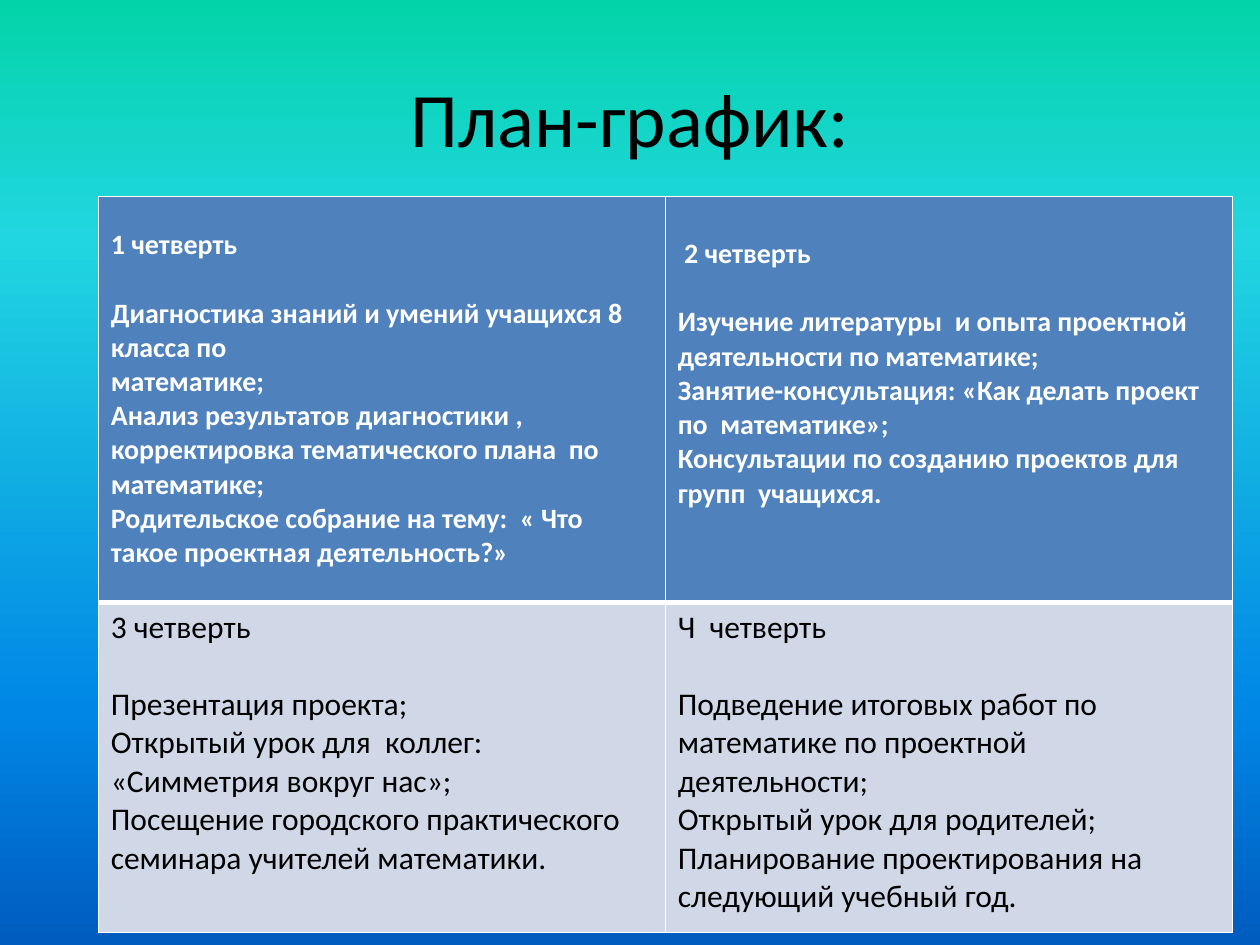
import pptx
import pptx.util
import pptx.oxml
import pptx.oxml.ns
import pptx.dml.color
import pptx.enum.text

Inches, Pt = pptx.util.Inches, pptx.util.Pt
FONT = "Calibri"
LINE_HEIGHT = 1.22
COLORS = {
    "heading_fill": "4F81BD",
    "body_fill": "D0D8E8",
    "light": "FFFFFF",
    "dark": "000000",
}
BACKGROUND_STOPS = [(0, "03D4A8"), (25, "21D6E0"), (75, "0087E6"), (100, "005CBF")]

# One entry per table row; each quarter has its top margin in inches and its lines.
ROWS = [
    {
        "height": 3.22, "size": 16, "bold": True, "fill": "heading_fill", "text": "light",
        "borders": {"L": 1, "R": 1, "T": 1, "B": 3},
        "quarters": [
            (0.25, [
                "1 четверть",
                "Диагностика знаний и умений учащихся 8 класса по",
                "математике;",
                "Анализ результатов диагностики , корректировка тематического плана  по математике;",
                "Родительское собрание на тему:  « Что такое проектная деятельность?»",
            ]),
            (0.32, [
                " 2 четверть",
                "Изучение литературы  и опыта проектной  деятельности по математике;",
                "Занятие-консультация: «Как делать проект по  математике»;",
                "Консультации по созданию проектов для групп  учащихся.",
            ]),
        ],
    },
    {
        "height": 2.62, "size": 18, "bold": False, "fill": "body_fill", "text": "dark",
        "borders": {"L": 1, "R": 1, "T": 3, "B": 1},
        "quarters": [
            (0.05, [
                "3 четверть",
                "Презентация проекта;",
                "Открытый урок для  коллег: «Симметрия вокруг нас»;",
                "Посещение городского практического семинара учителей математики.",
            ]),
            (0.05, [
                "Ч  четверть",
                "Подведение итоговых работ по математике по проектной деятельности;",
                "Открытый урок для родителей;",
                "Планирование проектирования на следующий учебный год.",
            ]),
        ],
    },
]


def style_font(font, size, color, bold=False):
    font.name = FONT
    font.size = Pt(size)
    font.bold = bold
    font.color.rgb = pptx.dml.color.RGBColor.from_string(COLORS[color])


def set_borders(cell, widths):
    properties = cell._tc.get_or_add_tcPr()
    for position, (side, width) in enumerate(widths.items()):
        properties.insert(position, pptx.oxml.parse_xml(
            f'<a:ln{side} {pptx.oxml.ns.nsdecls("a")} w="{Pt(width)}"><a:solidFill>'
            f'<a:srgbClr val="{COLORS["light"]}"/></a:solidFill></a:ln{side}>'))


deck = pptx.Presentation()
deck.slide_width, deck.slide_height = Inches(10), Inches(7.5)
page = deck.slides.add_slide(deck.slide_layouts[5])

# Background gradient, running from top to bottom
background = page.background.fill
background.gradient()
background.gradient_angle = 270
stop_list = page.element.find(".//" + pptx.oxml.ns.qn("a:gsLst"))
for stop in list(stop_list):
    stop_list.remove(stop)
for percent, color in BACKGROUND_STOPS:
    stop_list.append(pptx.oxml.parse_xml(
        f'<a:gs {pptx.oxml.ns.nsdecls("a")} pos="{percent * 1000}">'
        f'<a:srgbClr val="{color}"/></a:gs>'))

# Title
title = page.shapes.title
title.left, title.top = Inches(0.5), Inches(0.3)
title.width, title.height = Inches(9), Inches(1.25)
title.text_frame.text = "План-график:"
title.text_frame.vertical_anchor = pptx.enum.text.MSO_ANCHOR.MIDDLE
heading = title.text_frame.paragraphs[0]
heading.alignment = pptx.enum.text.PP_ALIGN.CENTER
style_font(heading.font, 44, "dark")

# Schedule by quarter
table_height = sum(row["height"] for row in ROWS)
schedule = page.shapes.add_table(
    2, 2, Inches(0.78), Inches(1.56), Inches(9), Inches(table_height)).table
for row_index, row in enumerate(ROWS):
    schedule.rows[row_index].height = Inches(row["height"])
    for column_index, (top_margin, lines) in enumerate(row["quarters"]):
        cell = schedule.cell(row_index, column_index)
        cell.margin_top = Inches(top_margin)
        cell.fill.solid()
        cell.fill.fore_color.rgb = pptx.dml.color.RGBColor.from_string(COLORS[row["fill"]])
        set_borders(cell, row["borders"])
        cell.text_frame.text = "\n".join(lines)
        for para in cell.text_frame.paragraphs:
            style_font(para.font, row["size"], row["text"], row["bold"])
        cell.text_frame.paragraphs[0].space_after = Pt(round(row["size"] * LINE_HEIGHT, 1))

deck.save("out.pptx")
